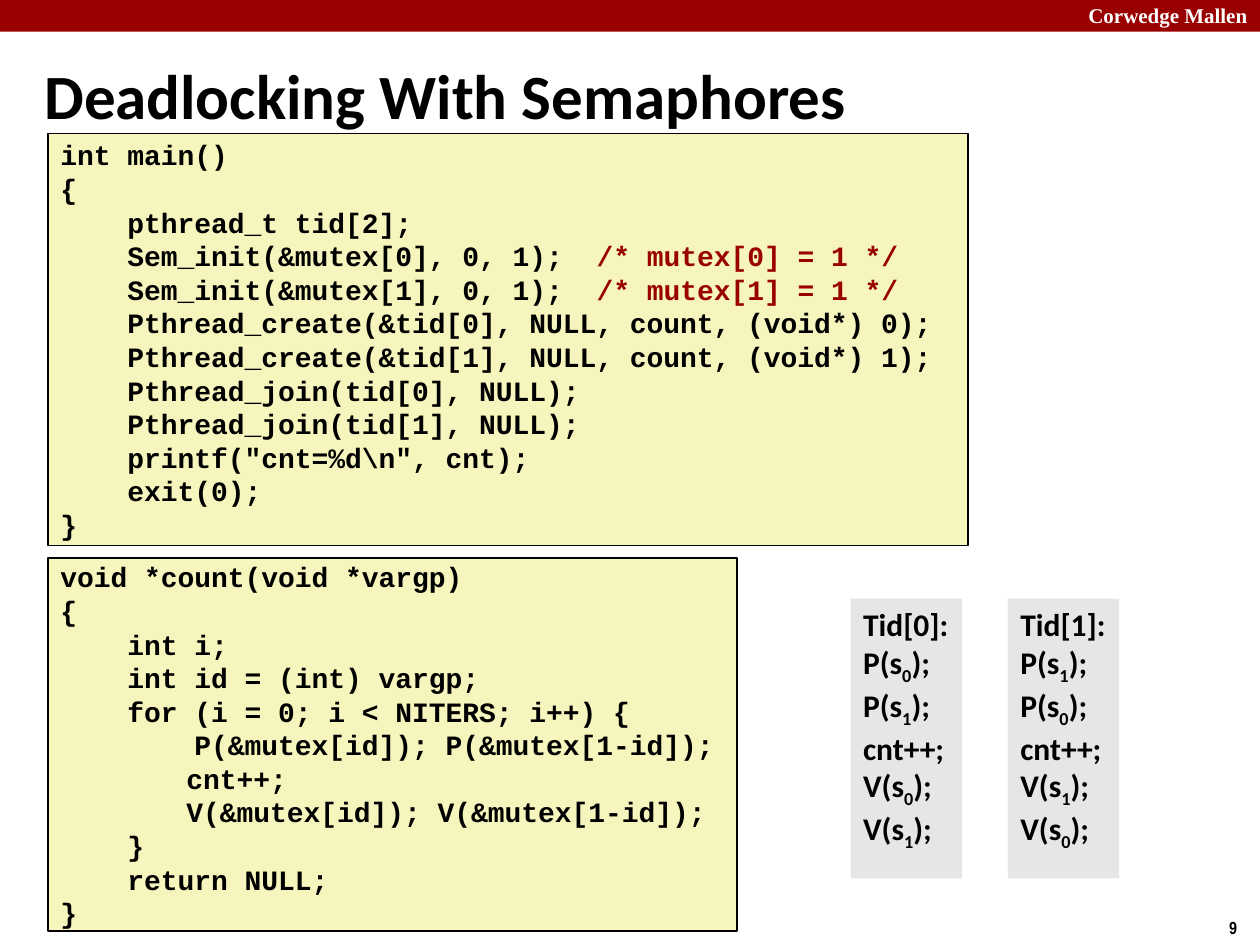
from pptx import Presentation
from pptx import util as u
from pptx.dml.color import RGBColor
from pptx.enum import shapes, text

COLORS = {"red": "990000", "white": "FFFFFF", "black": "000000",
          "code": "F6F5BD", "thread": "E6E6E6"}
CODE_STEP = 1.35
TAB_STEP = 2.54

MAIN_CODE = [
    (0, "int main()"),
    (0, "{"),
    (CODE_STEP, "pthread_t tid[2];"),
    (CODE_STEP, "Sem_init(&mutex[0], 0, 1);  ", "/* mutex[0] = 1 */"),
    (CODE_STEP, "Sem_init(&mutex[1], 0, 1);  ", "/* mutex[1] = 1 */"),
    (CODE_STEP, "Pthread_create(&tid[0], NULL, count, (void*) 0);"),
    (CODE_STEP, "Pthread_create(&tid[1], NULL, count, (void*) 1);"),
    (CODE_STEP, "Pthread_join(tid[0], NULL);"),
    (CODE_STEP, "Pthread_join(tid[1], NULL);"),
    (CODE_STEP, 'printf("cnt=%d\\n", cnt);'),
    (CODE_STEP, "exit(0);"),
    (0, "}"),
]
COUNT_CODE = [
    (0, "void *count(void *vargp)"),
    (0, "{"),
    (CODE_STEP, "int i;"),
    (CODE_STEP, "int id = (int) vargp;"),
    (CODE_STEP, "for (i = 0; i < NITERS; i++) {"),
    (2 * CODE_STEP, "P(&mutex[id]); P(&mutex[1-id]);"),
    (TAB_STEP, "cnt++;"),
    (TAB_STEP, "V(&mutex[id]); V(&mutex[1-id]);"),
    (CODE_STEP, "}"),
    (CODE_STEP, "return NULL;"),
    (0, "}"),
]


def color(name):
    """Return the named colour."""
    return RGBColor.from_string(COLORS[name])


def add_run(paragraph, words, font, size, shade="black", subscript=False):
    """Append one bold run to a paragraph."""
    run = paragraph.add_run()
    run.text = words
    run.font.name = font
    run.font.size = u.Pt(size)
    run.font.bold = True
    run.font.color.rgb = color(shade)
    if subscript:
        run.font._element.set("baseline", "-25000")


def next_paragraph(frame, index):
    """Return the first paragraph, or a new one, aligned left."""
    paragraph = frame.add_paragraph() if index else frame.paragraphs[0]
    paragraph.alignment = text.PP_ALIGN.LEFT
    return paragraph


def add_box(slide, box, fill, outlined=False):
    """Add a flat rectangle and return its text frame."""
    shape = slide.shapes.add_shape(shapes.MSO_SHAPE.RECTANGLE, *map(u.Cm, box))
    shape.shadow.inherit = False
    shape.fill.solid()
    shape.fill.fore_color.rgb = color(fill)
    if outlined:
        shape.line.color.rgb = color("black")
        shape.line.width = u.Pt(1)
    else:
        shape.line.fill.background()
    shape.text_frame.word_wrap = True
    return shape.text_frame


def add_label(slide, box, words, font, size, shade):
    """Add a right-aligned one-line text box."""
    frame = slide.shapes.add_textbox(*map(u.Cm, box)).text_frame
    frame.word_wrap = True
    paragraph = frame.paragraphs[0]
    paragraph.alignment = text.PP_ALIGN.RIGHT
    add_run(paragraph, words, font, size, shade)


def set_title(slide, words):
    """Place and fill the title placeholder."""
    title = slide.shapes.title
    title.left, title.top, title.width, title.height = map(
        u.Cm, (0.64, 0.84, 21.08, 2.11))
    frame = title.text_frame
    frame.auto_size = text.MSO_AUTO_SIZE.NONE
    frame.vertical_anchor = text.MSO_ANCHOR.MIDDLE
    add_run(next_paragraph(frame, 0), words, "Calibri", 36)


def add_code(slide, box, lines):
    """Add a code listing with indented lines and red comments."""
    frame = add_box(slide, box, "code", outlined=True)
    frame.margin_top = frame.margin_bottom = 0
    frame.vertical_anchor = text.MSO_ANCHOR.MIDDLE
    for index, (indent, code, *comments) in enumerate(lines):
        paragraph = next_paragraph(frame, index)
        properties = paragraph._p.get_or_add_pPr()
        properties.set("marL", str(u.Cm(indent)))
        properties.set("indent", "0")
        add_run(paragraph, code, "Courier New", 16)
        for comment in comments:
            add_run(paragraph, comment, "Courier New", 16, "red")


def add_thread(slide, left, thread):
    """Add the semaphore steps of one thread."""
    frame = add_box(slide, (left, 12.07, 2.24, 5.64), "thread")
    frame.vertical_anchor = text.MSO_ANCHOR.TOP
    first, second = str(thread), str(1 - thread)
    steps = [(f"Tid[{thread}]:",), ("P(s", first), ("P(s", second),
             ("cnt++;",), ("V(s", first), ("V(s", second)]
    for index, (words, *semaphore) in enumerate(steps):
        paragraph = next_paragraph(frame, index)
        add_run(paragraph, words, "Calibri", 18)
        for number in semaphore:
            add_run(paragraph, number, "Calibri", 18, subscript=True)
            add_run(paragraph, ");", "Calibri", 18)


def main():
    """Build and save the slide."""
    presentation = Presentation()
    presentation.slide_width, presentation.slide_height = u.Cm(25.4), u.Cm(19.05)
    slide = presentation.slides.add_slide(presentation.slide_layouts[5])
    add_box(slide, (0, 0, 25.4, 0.64), "red")
    add_label(slide, (20.4, -0.08, 5, 0.76), "Corwedge Mallen",
              "Times New Roman", 12, "white")
    add_label(slide, (24.33, 18.36, 0.86, 0.69), "9", "Arial Narrow", 10, "black")
    set_title(slide, "Deadlocking With Semaphores")
    add_code(slide, (0.97, 2.69, 18.54, 8.31), MAIN_CODE)
    add_code(slide, (0.97, 11.25, 13.89, 7.52), COUNT_CODE)
    for thread, left in enumerate((17.15, 20.32)):
        add_thread(slide, left, thread)
    presentation.save("out.pptx")


if __name__ == "__main__":
    main()
